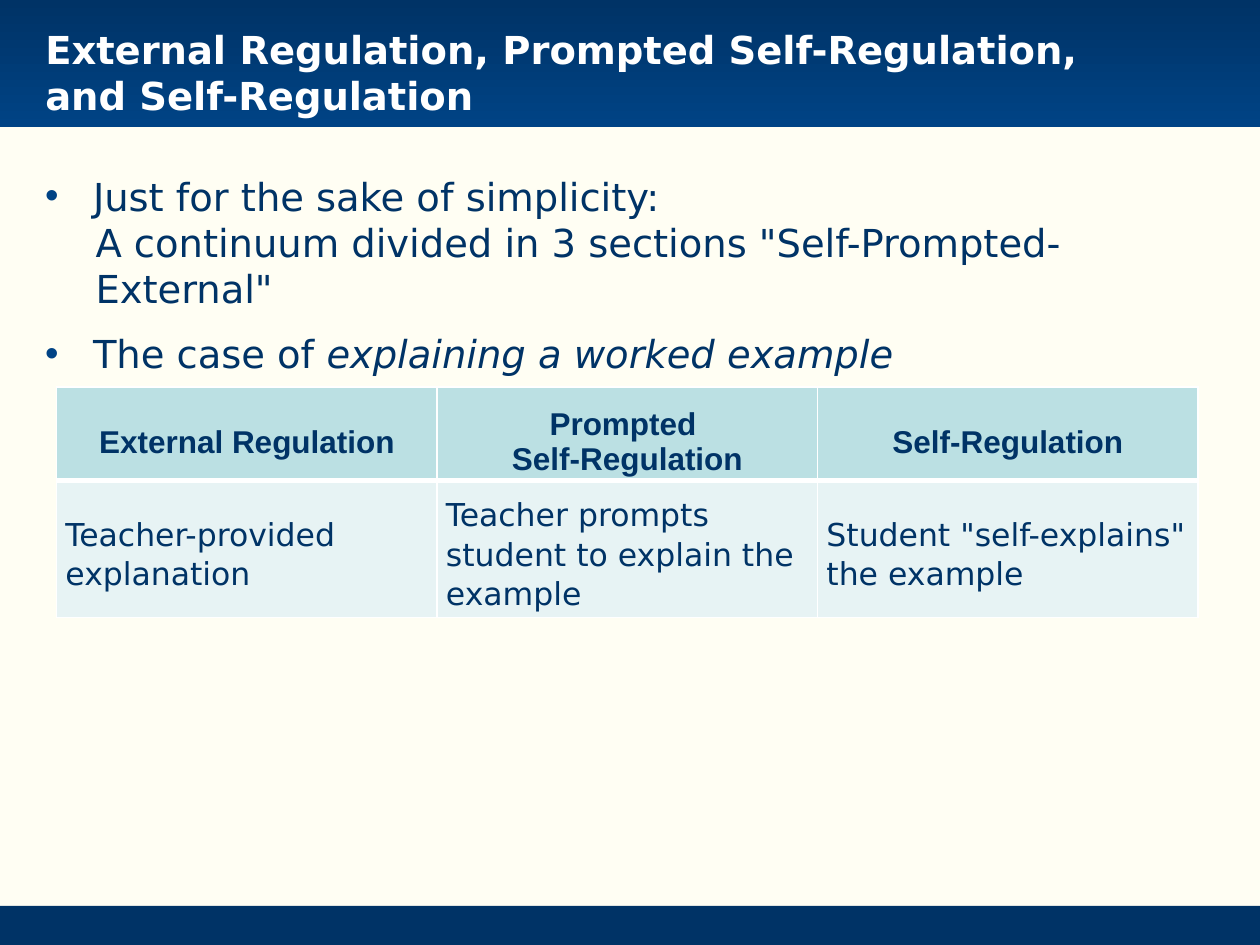
from pptx import Presentation
from pptx.dml.color import RGBColor
from pptx.enum.shapes import MSO_SHAPE as Shape
from pptx.enum.text import MSO_ANCHOR as Anchor, PP_ALIGN as Align
from pptx.oxml import parse_xml
from pptx.oxml.ns import nsdecls
from pptx.util import Inches, Pt

NAVY = RGBColor(0x00, 0x33, 0x66)
BLUE = RGBColor(0x00, 0x43, 0x85)
WHITE = RGBColor(0xFF, 0xFF, 0xFF)
CREAM = RGBColor(0xFF, 0xFE, 0xF3)
TEAL = RGBColor(0xBB, 0xE0, 0xE3)
PALE = RGBColor(0xE7, 0xF3, 0xF4)
SANS = "DejaVu Sans"

HEADS = [["External Regulation"], ["Prompted ", "Self-Regulation"], ["Self-Regulation"]]
CASES = [["Teacher-provided explanation"],
         ["Teacher prompts student to explain the example"],
         ['Student "self-explains" the example']]


def put(para, text, size=22, face=SANS, color=NAVY, bold=False, italic=False,
        align=Align.LEFT, before=0, after=0, lead=1.0):
    para.alignment = align
    para.space_before, para.space_after = Pt(before), Pt(after)
    para.line_spacing = lead
    run = para.add_run()
    run.text = text
    font = run.font
    font.size, font.name, font.bold, font.italic = Pt(size), face, bold, italic
    font.color.rgb = color


def next_para(frame):
    first = frame.paragraphs[0]
    return frame.add_paragraph() if first.runs else first


def indent(para, left, hang=0, mark=None):
    props = para._p.get_or_add_pPr()
    props.set("marL", str(Inches(left)))
    props.set("indent", str(Inches(hang)))
    if mark:
        for xml in (f'<a:buClr {nsdecls("a")}><a:srgbClr val="{BLUE}"/></a:buClr>',
                    f'<a:buFont {nsdecls("a")} typeface="Arial"/>',
                    f'<a:buChar {nsdecls("a")} char="{mark}"/>'):
            props.append(parse_xml(xml))


def add_band(slide, top, height):
    band = slide.shapes.add_shape(Shape.RECTANGLE, 0, Inches(top), Inches(10), Inches(height))
    band.shadow.inherit = False
    band.line.fill.background()
    band.fill.solid()
    band.fill.fore_color.rgb = NAVY
    return band


def add_head(slide):
    band = add_band(slide, 0, 1.01)
    band.fill.gradient()
    band.fill.gradient_angle = 270
    for stop, color, place in zip(band.fill.gradient_stops, (NAVY, BLUE), (0, 1)):
        stop.color.rgb = color
        stop.position = place
    title = slide.shapes.title
    slide.shapes._spTree.append(title._element)
    title.left, title.top = Inches(0.26), Inches(0.15)
    title.width, title.height = Inches(9), Inches(0.84)
    frame = title.text_frame
    frame.word_wrap = True
    frame.vertical_anchor = Anchor.MIDDLE
    put(frame.paragraphs[0], "External Regulation, Prompted Self-Regulation, and Self-Regulation",
        color=WHITE, bold=True)


def add_body(slide):
    box = slide.shapes.add_textbox(Inches(0.26), Inches(1.32), Inches(9.45), Inches(4.92))
    frame = box.text_frame
    frame.word_wrap = True
    para = next_para(frame)
    indent(para, 0.38, -0.38, "•")
    put(para, "Just for the sake of simplicity:")
    para = next_para(frame)
    indent(para, 0.4)
    put(para, 'A continuum divided in 3 sections "Self-Prompted-External"')
    para = next_para(frame)
    indent(para, 0.38, -0.38, "•")
    put(para, "The case of ", before=11)
    put(para, "explaining a worked example", before=11, italic=True)


def set_edges(cell, top, bottom):
    props = cell._tc.get_or_add_tcPr()
    edges = (("lnL", 1), ("lnR", 1), ("lnT", top), ("lnB", bottom))
    for spot, (tag, width) in enumerate(edges):
        props.insert(spot, parse_xml(
            f'<a:{tag} {nsdecls("a")} w="{Pt(width)}"><a:solidFill>'
            f'<a:srgbClr val="{WHITE}"/></a:solidFill></a:{tag}>'))


def fill_cell(cell, lines, fill, inset, top, bottom, **fmt):
    cell.fill.solid()
    cell.fill.fore_color.rgb = fill
    cell.vertical_anchor = Anchor.MIDDLE
    cell.margin_left = cell.margin_right = Inches(0.07)
    cell.margin_top, cell.margin_bottom = Inches(inset), 0
    set_edges(cell, top, bottom)
    gap = 6 if len(lines) == 1 else 0
    for spot, line in enumerate(lines):
        put(next_para(cell.text_frame), line, size=18, after=gap,
            before=gap, lead=1.0 if spot else 1.07, **fmt)


def add_grid(slide):
    frame = slide.shapes.add_table(2, 3, Inches(0.45), Inches(3.07), Inches(9.06), Inches(1.59))
    table = frame.table
    table.first_row = table.horz_banding = False
    for row, height in zip(table.rows, (0.5, 1.09)):
        row.height = Inches(height)
    for col, (head, case) in enumerate(zip(HEADS, CASES)):
        table.columns[col].width = Inches(3.02)
        fill_cell(table.cell(0, col), head, TEAL, 0.12, 1, 3,
                  face="Arial", bold=True, align=Align.CENTER)
        fill_cell(table.cell(1, col), case, PALE, 0.08, 3, 1)


def main():
    deck = Presentation()
    deck.slide_width, deck.slide_height = Inches(10), Inches(7.5)
    slide = deck.slides.add_slide(deck.slide_layouts[5])
    slide.background.fill.solid()
    slide.background.fill.fore_color.rgb = CREAM
    add_band(slide, 7.19, 0.31)
    add_head(slide)
    add_body(slide)
    add_grid(slide)
    deck.save("out.pptx")


if __name__ == "__main__":
    main()
